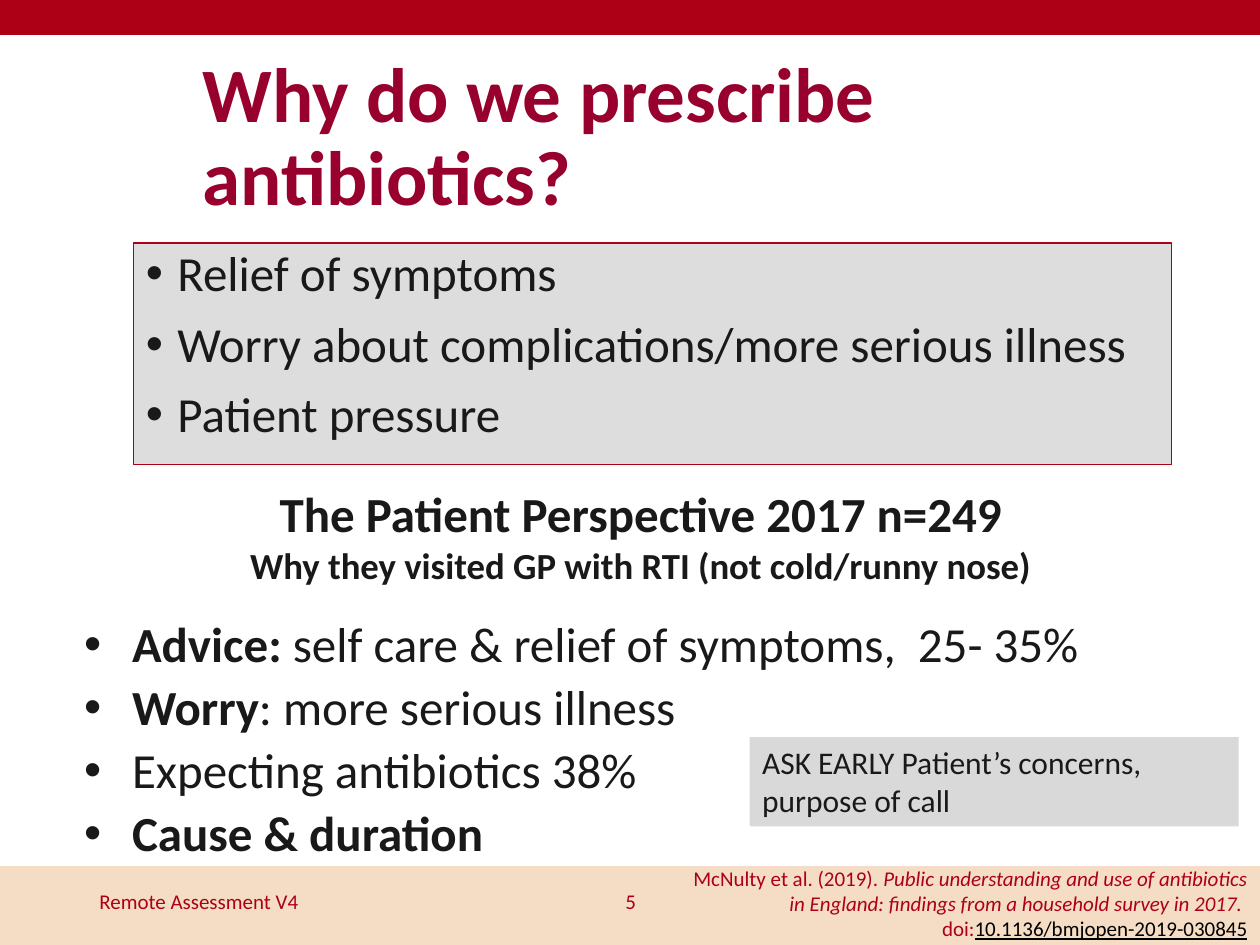
from lxml import etree
from pptx import Presentation
from pptx.dml.color import RGBColor
from pptx.enum import shapes, text
from pptx.oxml.ns import qn
from pptx.util import Inches, Pt

RED, INK, GREY = "AD0016", "191919", "D9D9D9"
LEFT, MID, RIGHT = text.PP_ALIGN.LEFT, text.PP_ALIGN.CENTER, text.PP_ALIGN.RIGHT


def rgb(hue):
    return RGBColor.from_string(hue)


def add_box(at, paras=(), size=28, hue=INK, fill=None, edge=None, width=1,
            align=LEFT, middle=False, hang=0, lead=1.0, before=0, after=0):
    """Add a box; each paragraph is a list of (text, style) runs.

    Style letters: b bold, i italic, u underlined in black.
    """
    place = [Inches(n) for n in at]
    if fill:
        box = slide.shapes.add_shape(shapes.MSO_SHAPE.RECTANGLE, *place)
        box.shadow.inherit = False
        box.fill.solid()
        box.fill.fore_color.rgb = rgb(fill)
        if edge:
            box.line.color.rgb = rgb(edge)
            box.line.width = Pt(width)
        else:
            box.line.fill.background()
    else:
        box = slide.shapes.add_textbox(*place)
    frame = box.text_frame
    frame.word_wrap = True
    anchor = text.MSO_ANCHOR
    frame.vertical_anchor = anchor.MIDDLE if middle else anchor.TOP
    for n, runs in enumerate(paras):
        para = frame.add_paragraph() if n else frame.paragraphs[0]
        if hang:
            props = para._p.get_or_add_pPr()
            props.set("marL", str(Inches(hang)))
            props.set("indent", str(-Inches(hang)))
            etree.SubElement(props, qn("a:buFont")).set("typeface", "Arial")
            etree.SubElement(props, qn("a:buChar")).set("char", "•")
        para.alignment = align
        para.line_spacing = lead
        if n and before:
            para.space_before = Pt(before)
        if after and n == len(paras) - 1:
            para.space_after = Pt(after)
        for words, style in runs:
            run = para.add_run()
            run.text = words
            font = run.font
            font.name, font.size = "Calibri", Pt(size)
            font.bold, font.italic = "b" in style, "i" in style
            font.underline = "u" in style
            font.color.rgb = rgb("000000" if "u" in style else hue)
    return box


deck = Presentation()
deck.slide_width, deck.slide_height = Inches(10), Inches(7.5)
slide = deck.slides.add_slide(deck.slide_layouts[6])

# Bands at foot and head
add_box((0, 6.88, 10, 0.62), fill="F4DDC4", edge="F4DDC4")
add_box((0, -0.01, 10, 0.28), fill=RED, edge=RED)

# Title
add_box((1.51, 0.46, 8.2, 1.29), [[("Why do we prescribe antibiotics?", "b")]],
        size=44, hue="98002E", middle=True, lead=0.9)

# Reasons of the prescriber
reasons = ["Relief of symptoms", "Worry about complications/more serious illness",
           "Patient pressure"]
add_box((1.06, 1.93, 8.24, 1.76), [[(item, "")] for item in reasons],
        fill="DDDDDD", edge=RED, width=0.75, hang=0.25, lead=0.9, before=10)

# Survey heading, second line smaller
head = add_box((0.57, 3.79, 9.03, 0.93),
               [[("The Patient Perspective 2017 n=249", "b")],
                [("Why they visited GP with RTI (not cold/runny nose)", "b")]],
               align=MID)
head.text_frame.paragraphs[1].runs[0].font.size = Pt(21)

# Reasons of the patient
add_box((0.57, 4.79, 9.22, 2.54),
        [[("Advice: ", "b"), ("self care & relief of symptoms,  25- 35%", "")],
         [("Worry", "b"), (": more serious illness", "")],
         [("Expecting antibiotics 38%", "")],
         [("Cause & duration", "b")]],
        hang=0.38, lead=1.07, after=8)

# Reminder
add_box((5.95, 5.85, 3.88, 0.71),
        [[("ASK EARLY Patient’s concerns, purpose of call", "")]],
        size=18, fill=GREY)

# Footer: citation, page number, name
add_box((5.36, 6.97, 4.64, 0.4),
        [[("McNulty et al. (2019). ", ""),
          ("Public understanding and use of antibiotics in England: "
           "findings from a household survey in 2017. ", "i")],
         [("doi:", ""), ("10.1136/bmjopen-2019-030845", "u")]],
        size=12, hue=RED, align=RIGHT, middle=True)
for left, words, align in [(3.88, "5", MID), (0.69, "Remote Assessment V4", LEFT)]:
    add_box((left, 6.95, 2.25, 0.4), [[(words, "")]],
            size=12, hue=RED, align=align, middle=True)

deck.save("out.pptx")
